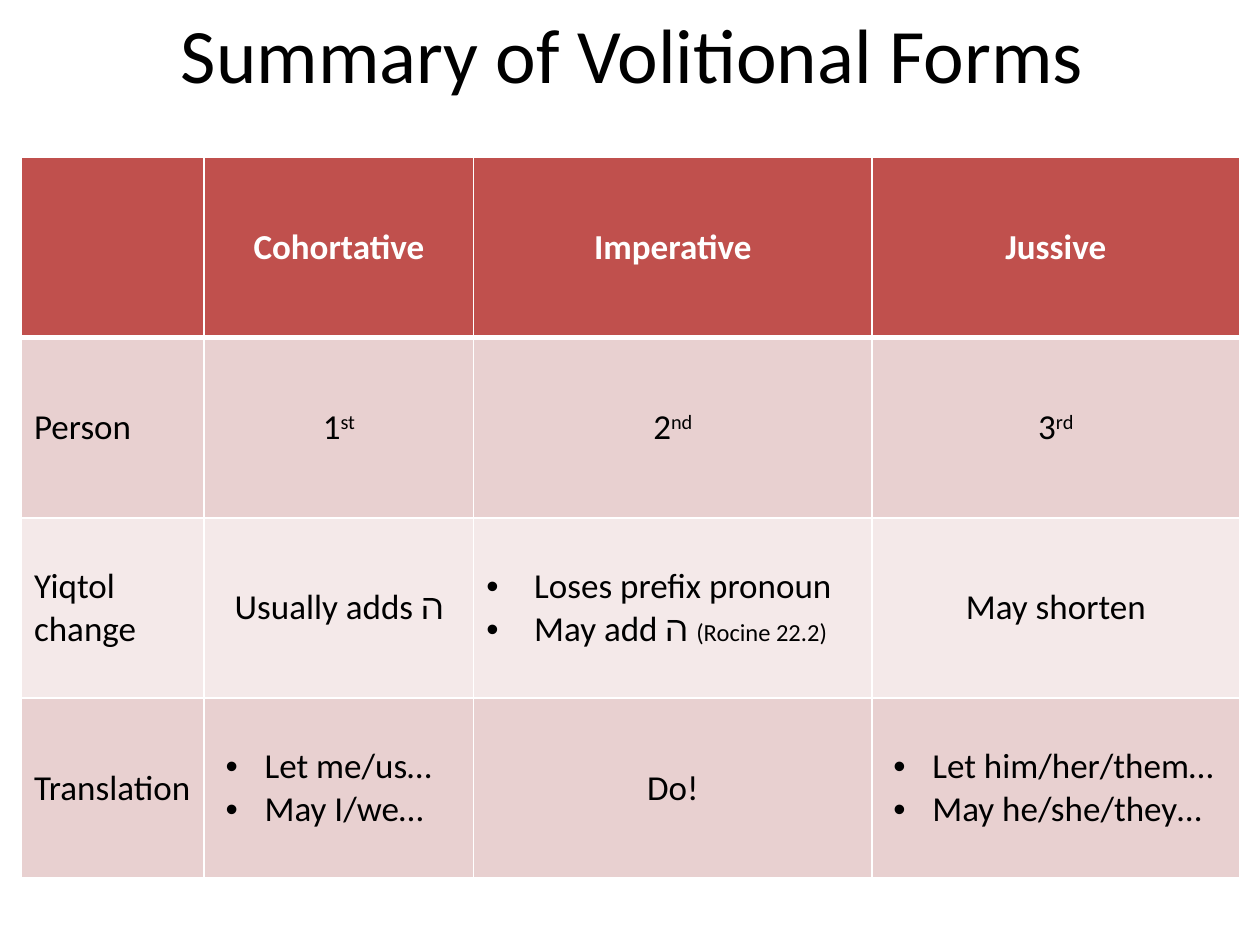
"""Build a slide with a table that summarises the volitional forms."""
import pptx
import pptx.dml.color
import pptx.enum.text
import pptx.oxml
import pptx.oxml.ns
import pptx.util

TITLE = "Summary of Volitional Forms"
HEADER = ["", "Cohortative", "Imperative", "Jussive"]
ROWS = [
    ["Person", [("1", "st")], [("2", "nd")], [("3", "rd")]],
    ["Yiqtol\nchange", "Usually adds ה",
     ["Loses prefix pronoun", ("May add ה ", "(Rocine 22.2)")], "May shorten"],
    ["Translation", "Let me/us…\nMay I/we…", "Do!",
     "Let him/her/them…\nMay he/she/they…"],
]
COLUMNS = [1.45, 2.14, 3.16, 2.92]
ROW_HEIGHT = 1.43
LEFT, TOP = 0.17, 1.25
FONT = "Calibri"
HEADER_FILL, BANDS = "C0504D", ["E8D0D0", "F4E9E9"]
BLACK, WHITE = "000000", "FFFFFF"
INDENT, HANGING, WIDE_HANGING = 0.38, 0.31, 0.38
ALIGN = pptx.enum.text.PP_ALIGN
MIDDLE = pptx.enum.text.MSO_ANCHOR.MIDDLE


def color(value):
    return pptx.dml.color.RGBColor.from_string(value)


def style(r, size, value, bold=False):
    r.font.name, r.font.size, r.font.bold = FONT, pptx.util.Pt(size), bold
    r.font.color.rgb = color(value)


def add_bullet(p, hanging):
    pPr = p._p.get_or_add_pPr()
    pPr.set("marL", str(pptx.util.Inches(INDENT)))
    pPr.set("indent", str(-pptx.util.Inches(hanging)))
    ns = pptx.oxml.ns.nsdecls("a")
    pPr.append(pptx.oxml.parse_xml(f'<a:buFont {ns} typeface="Arial"/>'))
    pPr.append(pptx.oxml.parse_xml(f'<a:buChar {ns} char="•"/>'))


def add_borders(cell, top, bottom):
    for side, width in zip("LRTB", (1, 1, top, bottom)):
        cell._tc.get_or_add_tcPr().append(pptx.oxml.parse_xml(
            f'<a:ln{side} {pptx.oxml.ns.nsdecls("a")} w="{pptx.util.Pt(width)}">'
            f'<a:solidFill><a:srgbClr val="{WHITE}"/></a:solidFill></a:ln{side}>'))


def fill_cell(cell, content, row, col):
    header = row == 0
    add_borders(cell, 3 if row == 1 else 1, 3 if header else 1)
    cell.fill.solid()
    cell.fill.fore_color.rgb = color(HEADER_FILL if header else BANDS[(row - 1) % 2])
    cell.vertical_anchor = MIDDLE
    lines = content.split("\n") if isinstance(content, str) else content
    tf = cell.text_frame
    for i, line in enumerate(lines):
        p = tf.paragraphs[0] if i == 0 else tf.add_paragraph()
        main, suffix = (line, "") if isinstance(line, str) else line
        bulleted = col > 0 and len(lines) > 1
        p.alignment = ALIGN.LEFT if col == 0 or bulleted else ALIGN.CENTER
        if bulleted:
            add_bullet(p, WIDE_HANGING if suffix else hanging_for(lines))
        for text in filter(None, (main, suffix)):
            r = p.add_run()
            r.text = text
            style(r, 20, WHITE if header else BLACK, header)
        if suffix.startswith("("):
            r.font.size = pptx.util.Pt(14)
        elif suffix:
            r.font._element.set("baseline", "30000")


def hanging_for(lines):
    return HANGING if all(isinstance(line, str) for line in lines) else WIDE_HANGING


def main():
    prs = pptx.Presentation()
    prs.slide_width, prs.slide_height = pptx.util.Inches(10), pptx.util.Inches(7.5)
    s = prs.slides.add_slide(prs.slide_layouts[6])

    title = s.shapes.add_textbox(*map(pptx.util.Inches, (0.52, 0, 9, 0.83)))
    tf = title.text_frame
    tf.word_wrap, tf.vertical_anchor, tf.text = True, MIDDLE, TITLE
    p = tf.paragraphs[0]
    p.alignment = ALIGN.CENTER
    style(p.runs[0], 44, BLACK)

    grid = [HEADER] + ROWS
    box = (LEFT, TOP, sum(COLUMNS), ROW_HEIGHT * len(grid))
    table = s.shapes.add_table(
        len(grid), len(COLUMNS), *map(pptx.util.Inches, box)).table
    for column, width in zip(table.columns, COLUMNS):
        column.width = pptx.util.Inches(width)
    for row, contents in enumerate(grid):
        table.rows[row].height = pptx.util.Inches(ROW_HEIGHT)
        for col, content in enumerate(contents):
            fill_cell(table.cell(row, col), content, row, col)
    prs.save("out.pptx")


if __name__ == "__main__":
    main()
